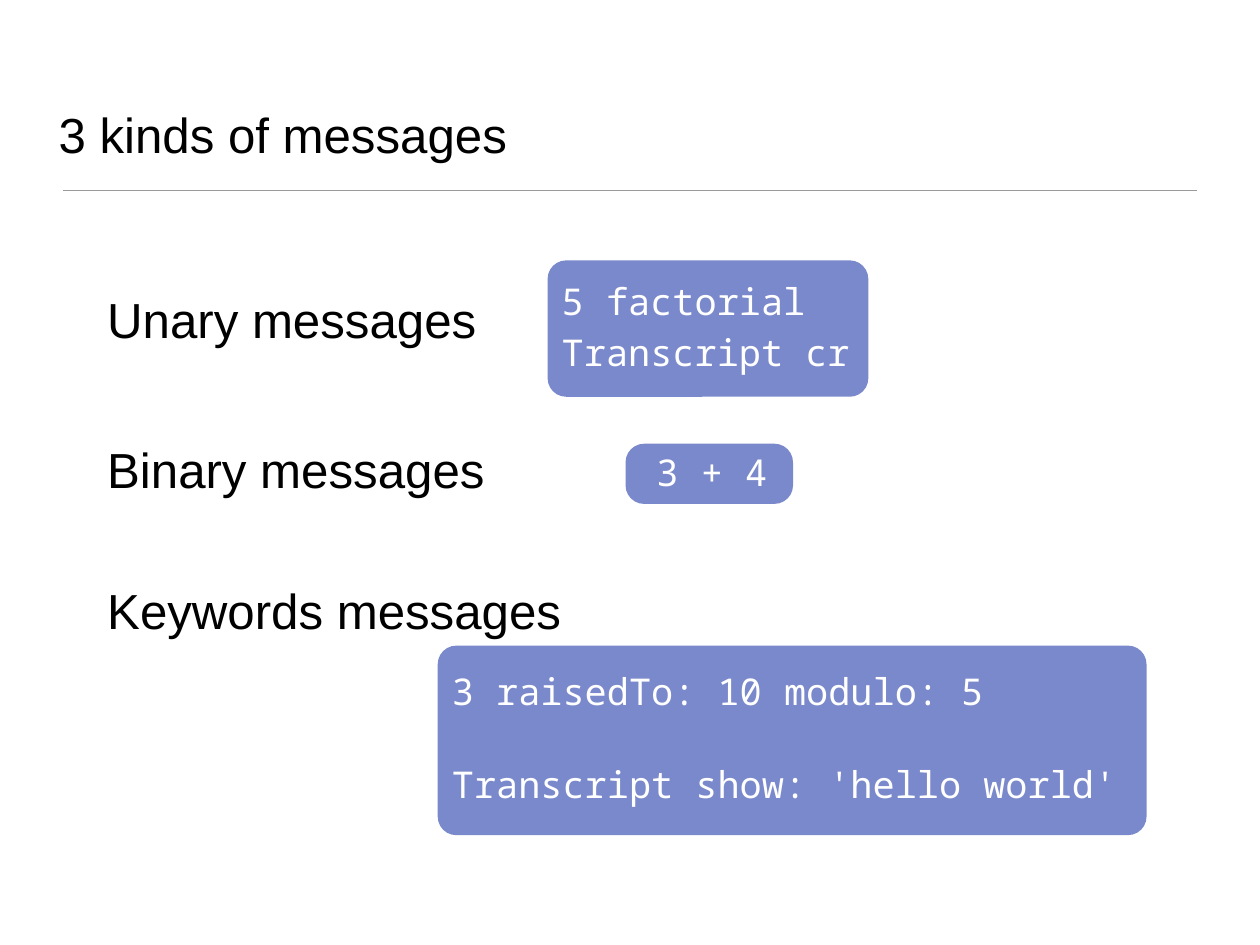
from lxml import etree
from pptx import Presentation
from pptx.dml.color import RGBColor
from pptx.enum.shapes import MSO_CONNECTOR, MSO_SHAPE
from pptx.enum.text import MSO_ANCHOR, MSO_AUTO_SIZE, PP_ALIGN
from pptx.oxml.ns import qn
from pptx.util import Pt

LINE = MSO_CONNECTOR.STRAIGHT
ROUND = MSO_SHAPE.ROUNDED_RECTANGLE
LEFT, CENTER = PP_ALIGN.LEFT, PP_ALIGN.CENTER
BOTTOM, MIDDLE = MSO_ANCHOR.BOTTOM, MSO_ANCHOR.MIDDLE
FIXED = MSO_AUTO_SIZE.NONE

PX = 9144
INSET = 4
CODE_INSET = 10
RADIUS = 21
COLORS = {"text": "000000", "code": "FFFFFF", "panel": "7A89CB", "rule": "9A9A9A"}
HEAD = {"name": "Arial", "size": Pt(40), "bold": False}
MONO = {"name": "Noto Sans Mono", "size": Pt(30)}

LABELS = [
    ("Unary messages", (117, 322, 456, 75)),
    ("Binary messages", (117, 492, 456, 75)),
    ("Keywords messages", (117, 651, 589, 75)),
]
PANELS = [
    (["5 factorial", "Transcript cr"], (618, 294, 362, 154), LEFT, 0.95, 7),
    (["3 + 4"], (706, 501, 189, 68), CENTER, 0.95, 7),
    (["3 raisedTo: 10 modulo: 5", "Transcript show: 'hello world'"],
     (494, 729, 800, 214), LEFT, 0.85, 45),
]


def color(key):
    return RGBColor.from_string(COLORS[key])


def apply(item, values):
    for name, value in values.items():
        setattr(item, name, value)


def scale(box):
    return [side * PX for side in box]


def set_frame(frame, anchor, left=INSET):
    apply(frame, {
        "word_wrap": True, "auto_size": FIXED, "vertical_anchor": anchor,
        "margin_left": left * PX, "margin_top": INSET * PX,
        "margin_right": INSET * PX, "margin_bottom": INSET * PX,
    })


def write(para, text, font, key, layout):
    run = para.add_run()
    run.text = text
    apply(run.font, font)
    run.font.color.rgb = color(key)
    apply(para, layout)


def add_title(slide, text, box):
    title = slide.shapes.title
    apply(title, dict(zip(("left", "top", "width", "height"), scale(box))))
    set_frame(title.text_frame, BOTTOM)
    write(title.text_frame.paragraphs[0], text, HEAD, "text", {"alignment": LEFT})


def add_rule(slide, box):
    left, top, width, height = scale(box)
    rule = slide.shapes.add_connector(LINE, left, top, left + width, top + height)
    rule.line.color.rgb = color("rule")
    rule.line.width = Pt(1)
    etree.SubElement(rule._element.spPr, qn("a:effectLst"))


def add_label(slide, text, box):
    frame = slide.shapes.add_textbox(*scale(box)).text_frame
    set_frame(frame, BOTTOM)
    write(frame.paragraphs[0], text, HEAD, "text", {"alignment": LEFT})


def add_panel(slide, lines, box, align, pitch, gap):
    panel = slide.shapes.add_shape(ROUND, *scale(box))
    panel.adjustments[0] = RADIUS / min(box[2:])
    panel.shadow.inherit = False
    panel.fill.solid()
    panel.fill.fore_color.rgb = color("panel")
    panel.line.fill.background()
    frame = panel.text_frame
    set_frame(frame, MIDDLE, CODE_INSET)
    for row, text in enumerate(lines):
        para = frame.add_paragraph() if row else frame.paragraphs[0]
        write(para, text, MONO, "code", {
            "alignment": align, "line_spacing": pitch,
            "space_before": Pt(gap if row else 7),
        })


def main():
    deck = Presentation()
    apply(deck, {"slide_width": 1422 * PX, "slide_height": 1067 * PX})
    slide = deck.slides.add_slide(deck.slide_layouts.get_by_name("Title Only"))
    add_rule(slide, (71, 215, 1280, 0))
    add_title(slide, "3 kinds of messages", (62, 36, 1297, 153))
    for text, box in LABELS:
        add_label(slide, text, box)
    for panel in PANELS:
        add_panel(slide, *panel)
    deck.save("out.pptx")


if __name__ == "__main__":
    main()
